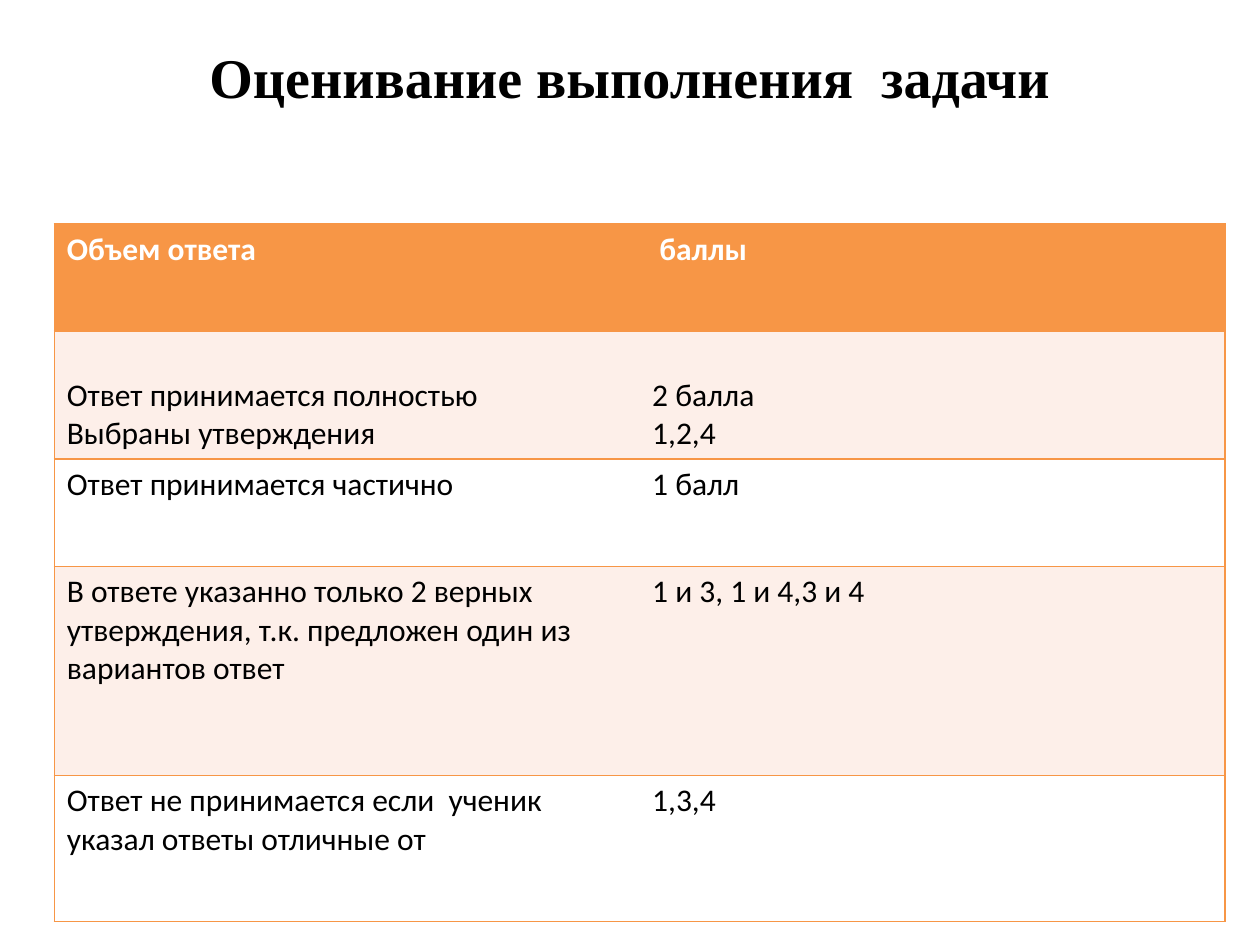
from dataclasses import dataclass

from lxml import etree
from pptx import Presentation
from pptx import util as u
from pptx.dml.color import RGBColor
from pptx.enum import text
from pptx.oxml import ns

ORANGE = RGBColor(0xF7, 0x96, 0x46)
PEACH = RGBColor(0xFD, 0xEF, 0xE9)
WHITE = RGBColor(0xFF, 0xFF, 0xFF)
BLACK = RGBColor(0x00, 0x00, 0x00)

COLUMN_WIDTH = 334.5
BORDER_WIDTH = 1


@dataclass
class Row:
    answer: str
    points: str
    height: float
    fill: RGBColor
    color: RGBColor = BLACK
    bold: bool = False
    anchor: text.MSO_ANCHOR = text.MSO_ANCHOR.TOP


ROWS = [
    Row("Объем ответа", " баллы", 61.2, ORANGE, WHITE, True),
    Row("Ответ принимается полностью\nВыбраны утверждения", "2 балла\n1,2,4",
        73.2, PEACH, anchor=text.MSO_ANCHOR.BOTTOM),
    Row("Ответ принимается частично", "1 балл", 61.2, WHITE),
    Row("В ответе указанно только 2 верных утверждения, т.к. предложен один из вариантов ответ",
        "1 и 3, 1 и 4,3 и 4", 119.5, PEACH),
    Row("Ответ не принимается если  ученик указал ответы отличные от", "1,3,4", 83.5, WHITE),
]


def format_runs(text_frame, font_name: str, size: float, color: RGBColor, bold: bool) -> None:
    for paragraph in text_frame.paragraphs:
        for run in paragraph.runs:
            run.font.name = font_name
            run.font.size = u.Pt(size)
            run.font.color.rgb = color
            run.font.bold = bold


def set_borders(cell, visible_sides: str) -> None:
    """Draw the named sides in orange and hide the others."""
    properties = cell._tc.get_or_add_tcPr()
    for position, side in enumerate("LRTB"):
        line = etree.Element(ns.qn(f"a:ln{side}"), w=str(u.Pt(BORDER_WIDTH)))
        if side in visible_sides:
            fill = etree.SubElement(line, ns.qn("a:solidFill"))
            etree.SubElement(fill, ns.qn("a:srgbClr"), val=str(ORANGE))
        else:
            etree.SubElement(line, ns.qn("a:noFill"))
        properties.insert(position, line)


def fill_cell(cell, content: str, row: Row, visible_sides: str) -> None:
    cell.text_frame.text = content
    cell.vertical_anchor = row.anchor
    cell.fill.solid()
    cell.fill.fore_color.rgb = row.fill
    format_runs(cell.text_frame, "Calibri", 18, row.color, row.bold)
    set_borders(cell, visible_sides)


def add_title(slide, content: str) -> None:
    title = slide.shapes.title
    title.left, title.top, title.width, title.height = (
        u.Pt(36), u.Pt(21.6), u.Pt(648), u.Pt(44))
    title.text_frame.text = content
    title.text_frame.vertical_anchor = text.MSO_ANCHOR.MIDDLE
    title.text_frame.paragraphs[0].alignment = text.PP_ALIGN.CENTER
    format_runs(title.text_frame, "Times New Roman", 32, BLACK, True)


def add_score_table(slide, rows: list[Row]) -> None:
    height = sum(row.height for row in rows)
    table = slide.shapes.add_table(
        len(rows), 2, u.Pt(31), u.Pt(128), u.Pt(2 * COLUMN_WIDTH), u.Pt(height)).table
    for column in table.columns:
        column.width = u.Pt(COLUMN_WIDTH)
    for index, row in enumerate(rows):
        table.rows[index].height = u.Pt(row.height)
        fill_cell(table.cell(index, 0), row.answer, row, "LTB")
        fill_cell(table.cell(index, 1), row.points, row, "RTB")


def main() -> None:
    presentation = Presentation()
    presentation.slide_width, presentation.slide_height = u.Pt(720), u.Pt(540)
    slide = presentation.slides.add_slide(presentation.slide_layouts[5])  # title only
    add_title(slide, "Оценивание выполнения  задачи")
    add_score_table(slide, ROWS)
    presentation.save("out.pptx")


if __name__ == "__main__":
    main()
